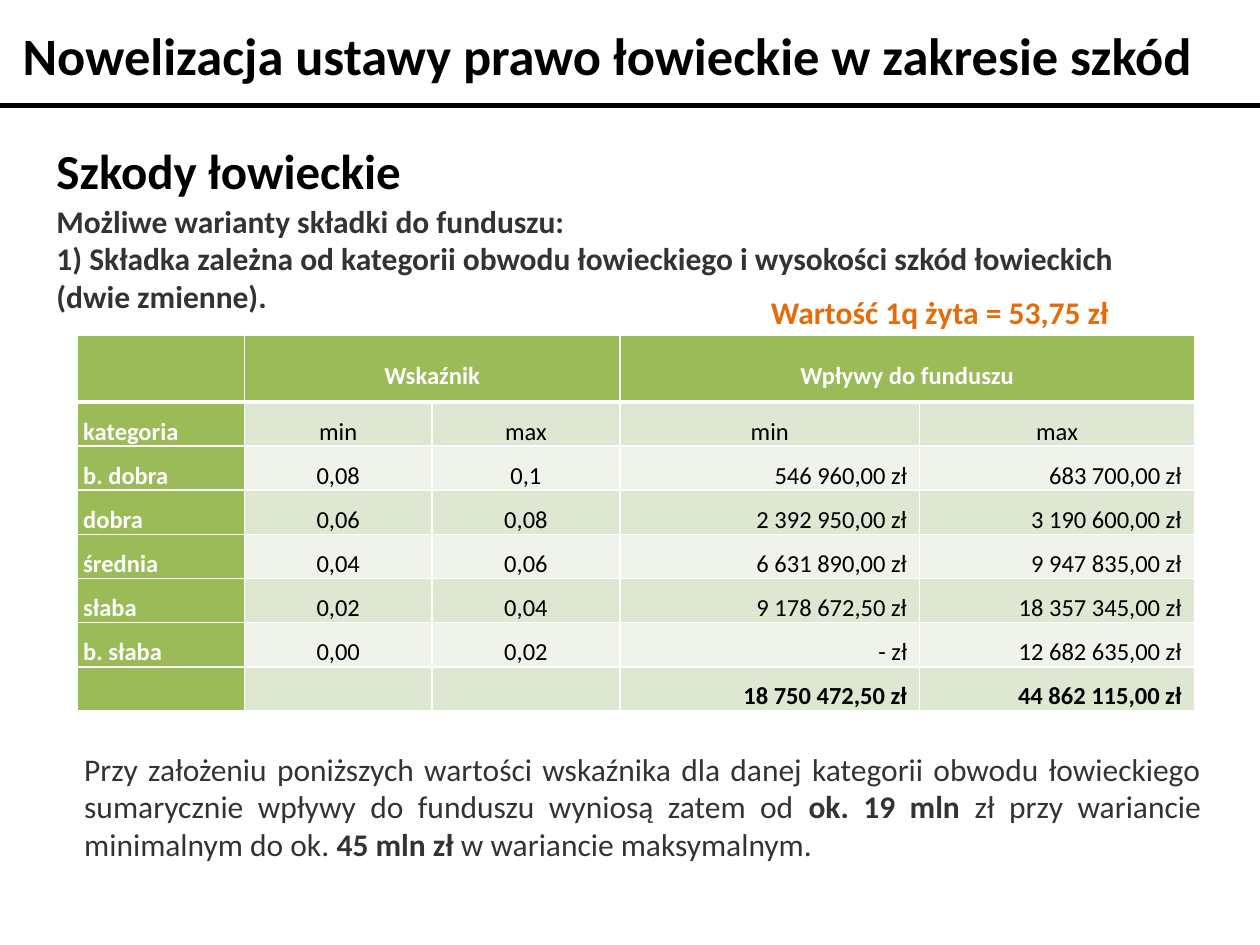
from dataclasses import dataclass

from lxml.etree import SubElement
from pptx import Presentation
from pptx.dml.color import RGBColor
from pptx.enum.shapes import MSO_CONNECTOR
from pptx.enum.text import MSO_ANCHOR as Anchor, MSO_AUTO_SIZE as AutoSize, PP_ALIGN as Align
from pptx.oxml.ns import qn
from pptx.util import Inches, Pt


@dataclass(frozen=True)
class Theme:
    font: str = "Calibri"
    black: str = "000000"
    white: str = "FFFFFF"
    body: str = "333333"
    accent: str = "E46C0A"
    green: str = "9BBB59"
    band_dark: str = "DEE7D1"
    band_light: str = "EFF3EA"
    title_size: int = 30
    heading_size: int = 28
    body_size: int = 18
    table_size: int = 14


THEME = Theme()
COLUMN_WIDTHS = [1.33, 1.49, 1.49, 2.38, 2.18]
HEADER_HEIGHT = 0.53
ROW_HEIGHT = 0.35
ROWS = [
    ["", "Wskaźnik", "", "Wpływy do funduszu", ""],
    ["kategoria", "min", "max", "min", "max"],
    ["b. dobra", "0,08", "0,1", "546 960,00 zł", "683 700,00 zł"],
    ["dobra", "0,06", "0,08", "2 392 950,00 zł", "3 190 600,00 zł"],
    ["średnia", "0,04", "0,06", "6 631 890,00 zł", "9 947 835,00 zł"],
    ["słaba", "0,02", "0,04", "9 178 672,50 zł", "18 357 345,00 zł"],
    ["b. słaba", "0,00", "0,02", "- zł", "12 682 635,00 zł"],
    ["", "", "", "18 750 472,50 zł", "44 862 115,00 zł"],
]
SUMMARY = [
    ("Przy założeniu poniższych wartości wskaźnika dla danej kategorii obwodu łowieckiego "
     "sumarycznie wpływy do funduszu wyniosą zatem od ", False),
    ("ok. 19 mln ", True),
    ("zł przy wariancie minimalnym do ok. ", False),
    ("45 mln zł", True),
    (" w wariancie maksymalnym.", False),
]


def format_run(run, size, color, bold):
    run.font.name = THEME.font
    run.font.size = Pt(size)
    run.font.bold = bold
    run.font.color.rgb = RGBColor.from_string(color)


def format_frame(text_frame, size, color, bold=True):
    for paragraph in text_frame.paragraphs:
        for run in paragraph.runs:
            format_run(run, size, color, bold)


def set_title(slide, text):
    title = slide.shapes.title
    title.left, title.top = Inches(0.08), Inches(0.13)
    title.width, title.height = Inches(9.88), Inches(0.61)
    text_frame = title.text_frame
    text_frame.text = text
    text_frame.auto_size = AutoSize.NONE
    text_frame.vertical_anchor = Anchor.TOP
    text_frame.paragraphs[0].alignment = Align.LEFT
    format_frame(text_frame, THEME.title_size, THEME.black)


def add_rule(slide, top):
    rule = slide.shapes.add_connector(
        MSO_CONNECTOR.STRAIGHT, 0, Inches(top), Inches(10), Inches(top))
    rule.line.width = Pt(2.75)
    rule.line.color.rgb = RGBColor.from_string(THEME.black)
    SubElement(rule._element.spPr, qn("a:effectLst"))


def add_text(slide, left, top, width, height, text, size, color, wrap=True):
    box = slide.shapes.add_textbox(Inches(left), Inches(top), Inches(width), Inches(height))
    text_frame = box.text_frame
    text_frame.word_wrap = wrap
    text_frame.text = text
    format_frame(text_frame, size, color)
    return text_frame


def add_summary(slide):
    text_frame = add_text(slide, 0.57, 5.9, 9.06, 1.01, "", THEME.body_size, THEME.body)
    paragraph = text_frame.paragraphs[0]
    paragraph.alignment = Align.JUSTIFY
    for text, bold in SUMMARY:
        run = paragraph.add_run()
        run.text = text
        format_run(run, THEME.body_size, THEME.body, bold)


def set_borders(cell, top=1, bottom=1):
    properties = cell._tc.get_or_add_tcPr()
    for side, width in (("L", 1), ("R", 1), ("T", top), ("B", bottom)):
        line = SubElement(properties, qn(f"a:ln{side}"), w=str(Pt(width)))
        fill = SubElement(line, qn("a:solidFill"))
        SubElement(fill, qn("a:srgbClr"), val=THEME.white)


def format_cell(cell, row, column, text):
    is_header = row == 0 or column == 0
    is_amount = row > 1 and column > 2
    set_borders(cell, top=3 if row == 1 else 1, bottom=3 if row == 0 else 1)
    band = THEME.band_dark if row % 2 else THEME.band_light
    cell.fill.solid()
    cell.fill.fore_color.rgb = RGBColor.from_string(THEME.green if is_header else band)
    cell.margin_left = Inches(0.05)
    cell.margin_right = Inches(0.1 if is_amount else 0.05)
    cell.margin_top = cell.margin_bottom = 0
    at_bottom = row > 1 and (column == 0 or is_amount)
    cell.vertical_anchor = Anchor.BOTTOM if at_bottom else Anchor.MIDDLE
    if not text:
        return
    cell.text_frame.text = text
    paragraph = cell.text_frame.paragraphs[0]
    paragraph.line_spacing = 1.5
    if is_amount:
        paragraph.alignment = Align.RIGHT
    else:
        paragraph.alignment = Align.LEFT if column == 0 else Align.CENTER
    color = THEME.white if is_header else THEME.black
    is_total = row == len(ROWS) - 1
    format_frame(cell.text_frame, THEME.table_size, color, is_header or is_total)


def add_fund_table(slide):
    height = HEADER_HEIGHT + ROW_HEIGHT * (len(ROWS) - 1)
    table = slide.shapes.add_table(
        len(ROWS), len(COLUMN_WIDTHS), Inches(0.61), Inches(2.66),
        Inches(sum(COLUMN_WIDTHS)), Inches(height)).table
    for column, width in zip(table.columns, COLUMN_WIDTHS):
        column.width = Inches(width)
    for index, row in enumerate(table.rows):
        row.height = Inches(ROW_HEIGHT if index else HEADER_HEIGHT)
    for row, values in enumerate(ROWS):
        for column, text in enumerate(values):
            format_cell(table.cell(row, column), row, column, text)
    for first in (1, 3):
        table.cell(0, first).merge(table.cell(0, first + 1))


def main():
    presentation = Presentation()
    presentation.slide_width, presentation.slide_height = Inches(10), Inches(7.5)
    slide = presentation.slides.add_slide(presentation.slide_layouts[5])
    add_rule(slide, 0.84)
    set_title(slide, "Nowelizacja ustawy prawo łowieckie w zakresie szkód")
    add_text(slide, 0.35, 1.07, 2.97, 0.57, "Szkody łowieckie",
             THEME.heading_size, THEME.black, wrap=False)
    add_text(slide, 0.35, 1.55, 9.13, 1.01,
             "Możliwe warianty składki do funduszu:\n"
             "1) Składka zależna od kategorii obwodu łowieckiego i wysokości szkód łowieckich "
             "(dwie zmienne).", THEME.body_size, THEME.body)
    add_summary(slide)
    add_fund_table(slide)
    add_text(slide, 6.02, 2.28, 3.3, 0.4, "Wartość 1q żyta = 53,75 zł",
             THEME.body_size, THEME.accent, wrap=False)
    presentation.save("out.pptx")


if __name__ == "__main__":
    main()
